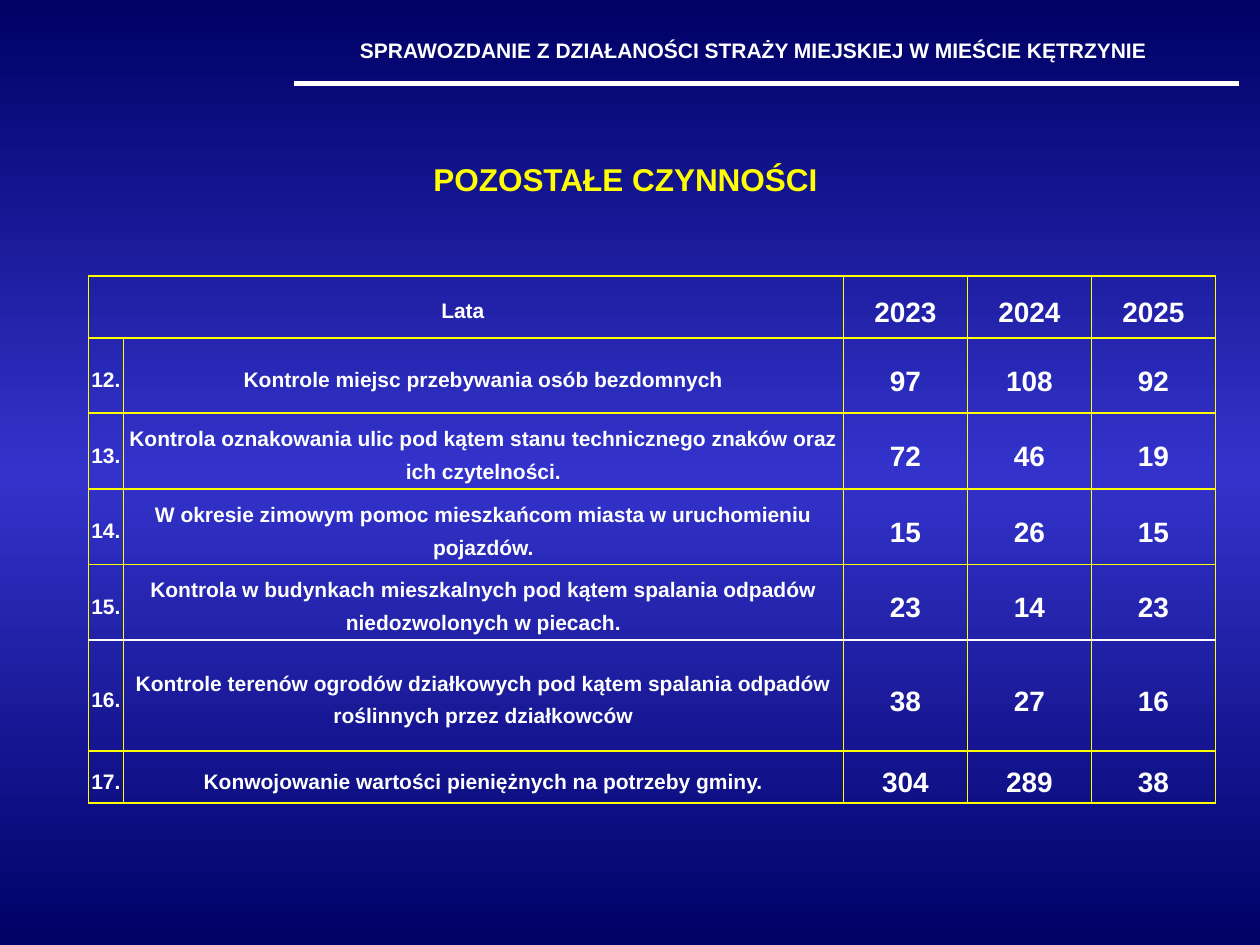
from copy import deepcopy

from lxml import etree
from pptx import Presentation
from pptx.dml.color import RGBColor
from pptx.enum.shapes import MSO_CONNECTOR
from pptx.enum.text import MSO_ANCHOR, PP_ALIGN
from pptx.oxml.ns import qn
from pptx.util import Cm, Pt

CENTER = PP_ALIGN.CENTER
MIDDLE = MSO_ANCHOR.MIDDLE
STRAIGHT = MSO_CONNECTOR.STRAIGHT

HEADING = "SPRAWOZDANIE Z DZIAŁANOŚCI STRAŻY MIEJSKIEJ W MIEŚCIE KĘTRZYNIE "
TITLE = "POZOSTAŁE CZYNNOŚCI "
HEADER = ("Lata ", "", "2023", "2024", "2025")
ACTIVITIES = [
    ("12.", "Kontrole miejsc przebywania osób bezdomnych", "97", "108", "92"),
    ("13.", "Kontrola oznakowania ulic pod kątem stanu technicznego znaków oraz ich czytelności.",
     "72", "46", "19"),
    ("14.", "W okresie zimowym pomoc mieszkańcom miasta w uruchomieniu pojazdów.",
     "15", "26", "15"),
    ("15.", "Kontrola w budynkach mieszkalnych pod kątem spalania odpadów niedozwolonych w piecach.",
     "23", "14", "23"),
    ("16.", "Kontrole terenów ogrodów działkowych pod kątem spalania odpadów roślinnych przez działkowców",
     "38", "27", "16"),
    ("17.", "Konwojowanie wartości pieniężnych na potrzeby gminy.", "304", "289", "38"),
]
COLUMN_WIDTHS = [0.71, 14.51] + [2.5] * 3
ROW_HEIGHTS = [1.25] + [1.52] * 4 + [2.24, 1.05]
FIRST_YEAR_COLUMN = 2
WHITE_RULE_BELOW = 4

THEME = {
    "font": "Arial",
    "text": "FFFFFF",
    "accent": "FFFF00",
    "gradient": [(0, "000066"), (0.5, "3333CC"), (1, "000066")],
    "label_size": 12,
    "title_size": 18,
    "number_size": 16,
}


def paint_background(slide):
    fill = slide.background.fill
    fill.gradient()
    fill.gradient_angle = 270
    stop_list = slide._element.find(".//" + qn("a:gsLst"))
    stop_list.append(deepcopy(stop_list[0]))
    for stop, (position, color) in zip(fill.gradient_stops, THEME["gradient"]):
        stop.position = position
        stop.color.rgb = RGBColor.from_string(color)


def write(frame, text, size, color):
    para = frame.paragraphs[0]
    para.text = text
    para.alignment = CENTER
    para.font.name = THEME["font"]
    para.font.size = Pt(size)
    para.font.bold = True
    para.font.color.rgb = RGBColor.from_string(color)
    return para


def add_text(slide, left, top, width, height, text, size, color):
    box = slide.shapes.add_textbox(Cm(left), Cm(top), Cm(width), Cm(height))
    box.text_frame.word_wrap = True
    write(box.text_frame, text, size, color)


def add_rule(slide, left, right, top):
    rule = slide.shapes.add_connector(STRAIGHT, Cm(left), Cm(top), Cm(right), Cm(top))
    rule.line.color.rgb = RGBColor.from_string(THEME["text"])
    rule.line.width = Pt(3)
    etree.SubElement(rule._element.spPr, qn("a:effectLst"))


def set_borders(cell, colors):
    properties = cell._tc.get_or_add_tcPr()
    for index, (side, color) in enumerate(colors.items()):
        border = etree.Element(qn("a:" + side), w=str(Pt(1)))
        fill = etree.SubElement(border, qn("a:solidFill"))
        etree.SubElement(fill, qn("a:srgbClr"), val=color)
        properties.insert(index, border)


def add_activity_table(slide, left, top):
    rows = [HEADER] + ACTIVITIES
    table = slide.shapes.add_table(
        len(rows), len(HEADER), Cm(left), Cm(top),
        Cm(sum(COLUMN_WIDTHS)), Cm(sum(ROW_HEIGHTS)),
    ).table
    table.first_row = False
    table.horz_banding = False
    for column, width in zip(table.columns, COLUMN_WIDTHS):
        column.width = Cm(width)
    for row, height in zip(table.rows, ROW_HEIGHTS):
        row.height = Cm(height)
    table.cell(0, 0).merge(table.cell(0, 1))

    for row_index, values in enumerate(rows):
        borders = dict.fromkeys(("lnL", "lnR", "lnT", "lnB"), THEME["accent"])
        if row_index == WHITE_RULE_BELOW:
            borders["lnB"] = THEME["text"]
        if row_index == WHITE_RULE_BELOW + 1:
            borders["lnT"] = THEME["text"]
        for column_index, value in enumerate(values):
            cell = table.cell(row_index, column_index)
            cell.fill.background()
            cell.vertical_anchor = MIDDLE
            cell.margin_left = cell.margin_right = Cm(0.05)
            cell.margin_top = cell.margin_bottom = Cm(0.05)
            set_borders(cell, borders)
            if cell.is_spanned:
                continue
            is_number = column_index >= FIRST_YEAR_COLUMN
            size = THEME["number_size" if is_number else "label_size"]
            para = write(cell.text_frame, value, size, THEME["text"])
            para.line_spacing = 1.4


def main():
    deck = Presentation()
    deck.slide_width, deck.slide_height = Cm(25.4), Cm(19.05)
    slide = deck.slides.add_slide(deck.slide_layouts[6])
    paint_background(slide)
    add_text(slide, 5.51, 0.64, 19.48, 0.76, HEADING, THEME["label_size"], THEME["text"])
    add_rule(slide, 5.93, 24.98, 1.69)
    add_text(slide, 0, 3.1, 25.4, 1.02, TITLE, THEME["title_size"], THEME["accent"])
    add_activity_table(slide, 1.78, 5.56)
    deck.save("out.pptx")


if __name__ == "__main__":
    main()
